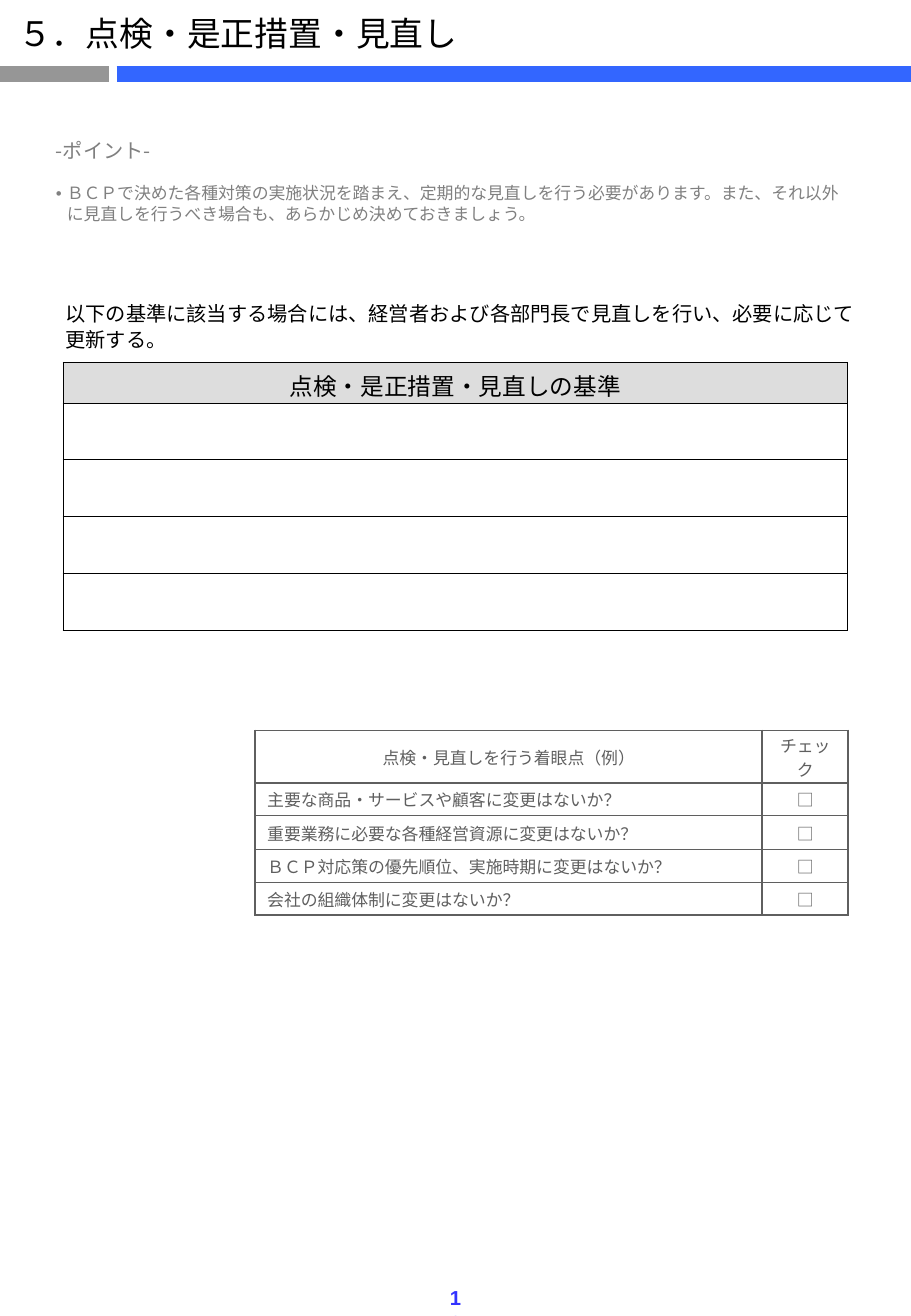
"""Build the review and corrective action page of a continuity plan."""
from lxml.etree import SubElement as Sub
from pptx import Presentation
from pptx.dml.color import RGBColor as RGB
from pptx.enum.shapes import MSO_CONNECTOR as Conn
from pptx.enum.text import MSO_ANCHOR as Anchor, MSO_AUTO_SIZE as Fit, PP_ALIGN as Align
from pptx.oxml.ns import qn
from pptx.util import Pt

BLACK = RGB(0x00, 0x00, 0x00)
GRAY = RGB(0x80, 0x80, 0x80)
DARK = RGB(0x5F, 0x5F, 0x5F)
PALE = RGB(0xDD, 0xDD, 0xDD)
BAR = RGB(0x96, 0x96, 0x96)
BLUE = RGB(0x33, 0x66, 0xFF)
NAVY = RGB(0x33, 0x33, 0xFF)
NOTO = "Noto Sans CJK JP"
ARIAL = "Arial"

POINT = ("ＢＣＰで決めた各種対策の実施状況を踏まえ、定期的な見直しを行う必要があります。"
         "また、それ以外に見直しを行うべき場合も、あらかじめ決めておきましょう。")
INTRO = ("以下の基準に該当する場合には、経営者および各部門長で見直しを行い、"
         "必要に応じて更新する。")
CHECKS = [
    "主要な商品・サービスや顧客に変更はないか？",
    "重要業務に必要な各種経営資源に変更はないか？",
    "ＢＣＰ対応策の優先順位、実施時期に変更はないか？",
    "会社の組織体制に変更はないか？",
]


def write(para, text, size, color, face=NOTO, bold=False, align=Align.LEFT, line=None):
    para.alignment = align
    if line:
        para.line_spacing = Pt(line)
    run = para.add_run()
    run.text = text
    font = run.font
    font.size, font.bold, font.name = Pt(size), bold, face
    font.color.rgb = color
    Sub(font._element, qn("a:ea"), typeface=face)


def place(shape, left, top, width, height):
    shape.left, shape.top = Pt(left), Pt(top)
    shape.width, shape.height = Pt(width), Pt(height)


def add_bar(slide, start, end, color):
    bar = slide.shapes.add_connector(Conn.STRAIGHT, Pt(start), Pt(43.9), Pt(end), Pt(43.9))
    bar.line.width = Pt(10)
    bar.line.color.rgb = color
    Sub(bar._element.spPr, qn("a:effectLst"))


def add_text(slide, box, text, wrap=True, **style):
    frame = slide.shapes.add_textbox(*map(Pt, box)).text_frame
    frame.word_wrap = wrap
    write(frame.paragraphs[0], text, **style)


def fill_title(slide):
    title = slide.shapes.title
    place(title, 3.6, 4.3, 289.4, 31)
    frame = title.text_frame
    frame.auto_size, frame.vertical_anchor = Fit.NONE, Anchor.MIDDLE
    write(frame.paragraphs[0], "５．点検・是正措置・見直し", 20, BLACK)


def fill_body(slide):
    body = slide.placeholders[1]
    place(body, 25.9, 61.2, 487.4, 74.2)
    frame = body.text_frame
    frame.auto_size, frame.margin_top = Fit.NONE, Pt(20.2)
    head, item = frame.paragraphs[0], frame.add_paragraph()
    write(head, "-ポイント-", 12, GRAY, line=15)
    write(item, POINT, 10, GRAY, line=12.4)
    for para, gap in ((head, 0), (item, 11.7)):
        para.space_before = Pt(gap)
        props = para._p.get_or_add_pPr()
        props.set("marL", str(Pt(6.5)))
        props.set("indent", str(Pt(-6.5)))
    Sub(head._p.pPr, qn("a:buNone"))
    Sub(item._p.pPr, qn("a:buChar"), char="•")


def add_edges(cell, color, width):
    props = cell._tc.get_or_add_tcPr()
    for side in ("lnL", "lnR", "lnT", "lnB"):
        edge = Sub(props, qn("a:" + side), w=str(Pt(width)))
        Sub(Sub(edge, qn("a:solidFill")), qn("a:srgbClr"), val=str(color))


def add_grid(slide, left, top, cols, rows, color, width):
    shape = slide.shapes.add_table(len(rows), len(cols), Pt(left), Pt(top),
                                   Pt(sum(cols)), Pt(sum(rows)))
    table = shape.table
    table.first_row = table.horz_banding = False
    for col, size in zip(table.columns, cols):
        col.width = Pt(size)
    for row, size in zip(table.rows, rows):
        row.height = Pt(size)
    for cell in table.iter_cells():
        add_edges(cell, color, width)
        cell.fill.background()
    return table


def fill_cell(cell, text, above, below, **style):
    cell.vertical_anchor = Anchor.MIDDLE
    cell.margin_top, cell.margin_bottom = Pt(above), Pt(below)
    write(cell.text_frame.paragraphs[0], text, **style)


def add_checks(slide):
    rows = [("点検・見直しを行う着眼点（例）", "チェック")] + [(text, "□") for text in CHECKS]
    table = add_grid(slide, 151.2, 432.7, [300.6, 51], [20.2, 19.4, 20.2, 19.4, 19.4], DARK, 1)
    for i, row in enumerate(rows):
        for j, text in enumerate(row):
            align = Align.LEFT if i and not j else Align.CENTER
            fill_cell(table.cell(i, j), text, 2, 1.2, size=10, color=DARK,
                      align=align, line=14)


def add_rules(slide):
    table = add_grid(slide, 37.4, 214.6, [465.1], [24.5, 33.1] + [33.8] * 3, BLACK, 0.5)
    head = table.cell(0, 0)
    head.fill.solid()
    head.fill.fore_color.rgb = PALE
    fill_cell(head, "点検・是正措置・見直しの基準", 4.4, 0, size=14, color=BLACK,
              face=ARIAL, align=Align.CENTER, line=17)


def main():
    deck = Presentation()
    deck.slide_width, deck.slide_height = Pt(540), Pt(779.8)
    slide = deck.slides.add_slide(deck.slide_layouts[1])
    add_bar(slide, 0, 64.8, BAR)
    add_bar(slide, 69.1, 540, BLUE)
    fill_title(slide)
    fill_body(slide)
    add_text(slide, (256.3, 758.2, 27.4, 21.6), "16", wrap=False, size=12, color=NAVY,
             face=ARIAL, bold=True, align=Align.CENTER)
    add_checks(slide)
    add_rules(slide)
    add_text(slide, (31.7, 174.2, 483.1, 50.4), INTRO, size=12, color=BLACK,
             face=ARIAL, line=15.2)
    deck.save("out.pptx")


if __name__ == "__main__":
    main()
